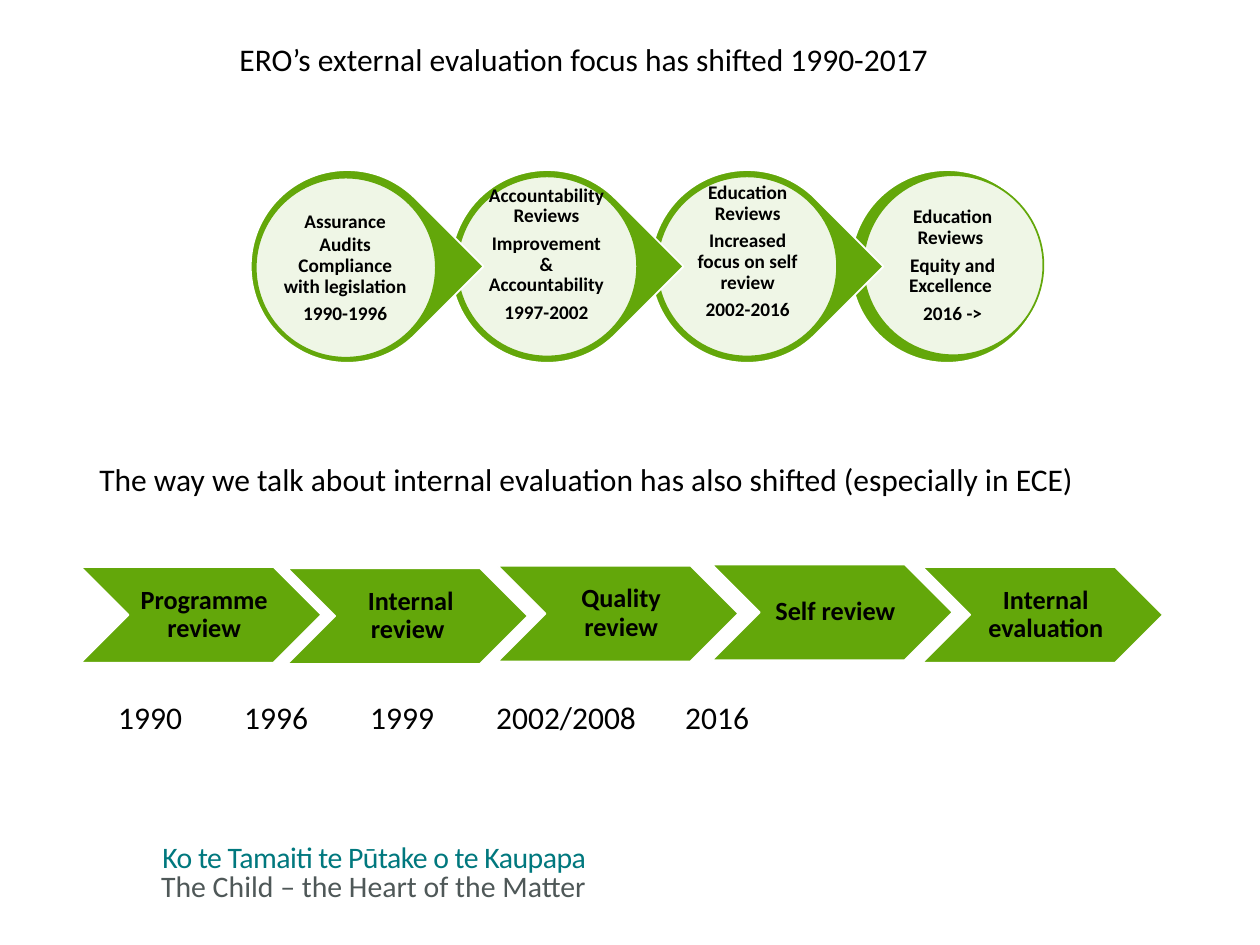
from lxml import etree
from pptx import Presentation
from pptx.dml.color import RGBColor
from pptx.enum import shapes, text
from pptx.oxml.ns import qn
from pptx.util import Inches, Pt

GREEN, WHITE, BLACK, TEAL, GREY = "63A70A", "FFFFFF", "000000", "00787E", "4F5858"
KIND = shapes.MSO_SHAPE
LEFT, CENTER = text.PP_ALIGN.LEFT, text.PP_ALIGN.CENTER
TOP, MIDDLE = text.MSO_ANCHOR.TOP, text.MSO_ANCHOR.MIDDLE

# External evaluation: paragraphs, inner circle offset, label offset, bottom inset
STAGES = [
    (["Assurance Audits", "Compliance with legislation", "1990-1996"],
     (0.04, 0.06), (0.24, 0.26), 0.02),
    (["Accountability Reviews", "Improvement & Accountability", "1997-2002"],
     (0.05, 0.05), (0.25, 0.25), 0.2),
    (["Education Reviews", "Increased focus on self review", "2002-2016"],
     (0.05, 0.05), (0.26, 0.25), 0.24),
    (["Education Reviews ", "Equity and Excellence ", "2016 ->"],
     (0.1, 0.04), (0.3, 0.25), 0.02),
]
STAGE_LEFT, STAGE_TOP, STAGE_STEP = 1.99, 1.35, 1.587

# Internal evaluation: term, left, top
TERMS = [
    ("Programme review", 0.64, 4.5),
    ("Internal review ", 2.28, 4.51),
    ("Quality review", 3.95, 4.49),
    ("Self review", 5.65, 4.48),
    ("Internal evaluation", 7.32, 4.5),
]
YEARS = ["1990", "1996", "1999", "2002/2008", "2016"]
YEAR_TABS = [2, 3.34, 5, 7]


def rgb(color):
    return RGBColor.from_string(color)


def inches(*lengths):
    return [Inches(length) for length in lengths]


def set_all(target, values):
    for name, value in values.items():
        setattr(target, name, value)


def write(box, paragraphs, size, color=BLACK, bold=False, align=LEFT,
          anchor=TOP, insets=(0.1, 0.05, 0.1, 0.05), tight=False):
    frame = box.text_frame
    margins = ("margin_left", "margin_top", "margin_right", "margin_bottom")
    set_all(frame, dict(zip(margins, inches(*insets))))
    set_all(frame, {"word_wrap": True, "vertical_anchor": anchor,
                    "auto_size": text.MSO_AUTO_SIZE.NONE})
    frame.text = "\n".join(paragraphs)
    for paragraph in frame.paragraphs:
        paragraph.alignment = align
        if tight:
            set_all(paragraph, {"line_spacing": 0.9, "space_after": Pt(size * 0.35)})
        for run in paragraph.runs:
            set_all(run.font, {"name": "Calibri", "size": Pt(size), "bold": bold})
            run.font.color.rgb = rgb(color)
    return frame


def add_text(slide, place, paragraphs, size, **style):
    return write(slide.shapes.add_textbox(*inches(*place)), paragraphs, size, **style)


def add_solid(slide, kind, place, fill, line, opacity=None):
    shape = slide.shapes.add_shape(kind, *inches(*place))
    shape.shadow.inherit = False
    shape.fill.solid()
    shape.fill.fore_color.rgb = rgb(fill)
    shape.line.color.rgb = rgb(line)
    shape.line.width = Pt(1)
    if opacity is not None:
        color = shape.fill._xPr.find(qn("a:solidFill")).find(qn("a:srgbClr"))
        etree.SubElement(color, qn("a:alpha"), val=str(opacity * 1000))
    return shape


def add_stage(slide, index):
    paragraphs, inner, label, bottom = STAGES[index]
    left = STAGE_LEFT + index * STAGE_STEP
    last = index == len(STAGES) - 1
    outer = add_solid(slide, KIND.OVAL if last else KIND.TEAR,
                      (left, STAGE_TOP, 1.53, 1.53), GREEN, WHITE)
    if not last:
        outer.rotation = 45
    add_solid(slide, KIND.OVAL, (left + inner[0], STAGE_TOP + inner[1], 1.43, 1.43),
              WHITE, GREEN, opacity=90)
    frame = add_text(slide, (left + label[0], STAGE_TOP + label[1], 1.02, 1.02),
                     paragraphs, 11, bold=True, align=CENTER, anchor=MIDDLE,
                     insets=(0.02, 0.02, 0.02, bottom), tight=True)
    if index == 0:
        set_all(frame.paragraphs[0], {"line_spacing": 1.0, "space_after": Pt(0)})


def add_term(slide, term, left, top):
    add_solid(slide, KIND.CHEVRON, (left, top, 1.91, 0.76), GREEN, WHITE)
    add_text(slide, (left + 0.38, top, 1.15, 0.76), [term], 15, bold=True,
             align=CENTER, anchor=MIDDLE, insets=(0.07, 0.02, 0.02, 0.02), tight=True)


def add_years(slide):
    box = slide.shapes.add_textbox(*inches(0.84, 5.49, 8.17, 0.71))
    properties = box.text_frame.paragraphs[0]._p.get_or_add_pPr()
    tabs = etree.SubElement(properties, qn("a:tabLst"))
    for position in YEAR_TABS:
        etree.SubElement(tabs, qn("a:tab"), pos=str(Inches(position)), algn="l")
    write(box, ["\t".join(YEARS)], 18)


def main():
    deck = Presentation()
    set_all(deck, {"slide_width": Inches(10), "slide_height": Inches(7.5)})
    slide = deck.slides.add_slide(deck.slide_layouts[5])

    # Motto at the foot
    motto = add_text(slide, (1.19, 6.61, 3.7, 0.39),
                     ["Ko te Tamaiti te Pūtake o te Kaupapa"], 17, color=TEAL)
    motto.paragraphs[0].runs[0].font._element.set("spc", "-30")
    add_text(slide, (1.18, 6.84, 3.7, 0.39),
             ["The Child – the Heart of the Matter"], 17, color=GREY)

    # External evaluation, drawn from the right so each point overlaps the next
    title = slide.shapes.title
    set_all(title, dict(zip(("left", "top", "width", "height"),
                            inches(1.8, 0.27, 6, 0.4))))
    write(title, ["ERO’s external evaluation focus has shifted 1990-2017"], 18)
    for index in reversed(range(len(STAGES))):
        add_stage(slide, index)

    # Internal evaluation
    add_text(slide, (0.69, 3.6, 8.22, 0.71),
             ["The way we talk about internal evaluation has also shifted "
              "(especially in ECE)"], 18)
    for term in TERMS:
        add_term(slide, *term)
    add_years(slide)

    deck.save("out.pptx")


if __name__ == "__main__":
    main()
